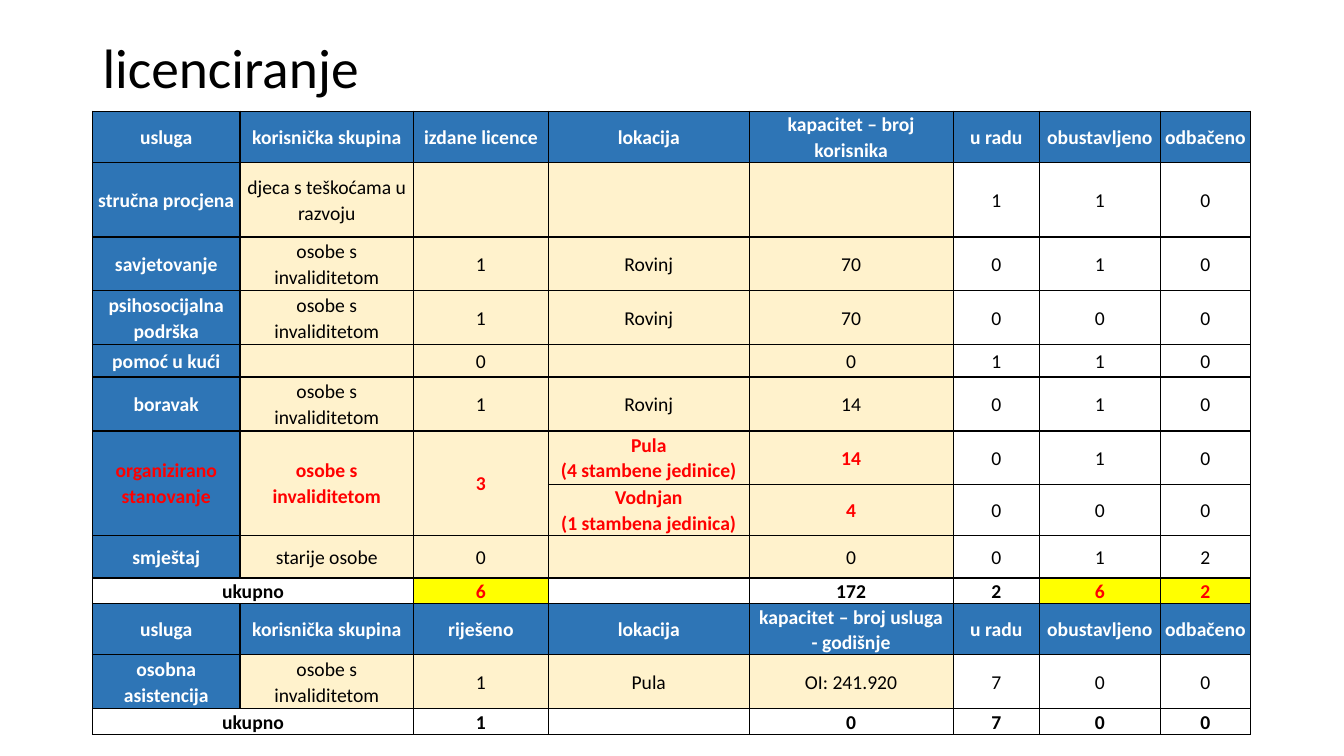
from lxml import etree
from pptx import Presentation
from pptx import util as u
from pptx.dml.color import RGBColor
from pptx.enum import text
from pptx.oxml import ns

FONT = "Calibri"
HUES = {"black": "000000", "white": "FFFFFF", "red": "FF0000",
        "blue": "2E75B6", "cream": "FFF2CC", "yellow": "FFFF00"}
WIDTHS = [3.72, 4.37, 3.4, 5.06, 5.14, 2.18, 3.04, 2.28]
HEIGHTS = [1.3, 1.87, 1.36, 1.36, 0.81, 1.36, 1.34, 1.28, 1.08, 0.64, 1.29, 1.36, 0.64]
DISABLED = "osobe s invaliditetom"
ROWS = [
    ["usluga", "korisnička skupina", "izdane licence", "lokacija",
     "kapacitet – broj korisnika", "u radu", "obustavljeno", "odbačeno"],
    ["stručna procjena", "djeca s teškoćama u razvoju", "", "", "", "1", "1", "0"],
    ["savjetovanje", DISABLED, "1", "Rovinj", "70", "0", "1", "0"],
    ["psihosocijalna podrška", DISABLED, "1", "Rovinj", "70", "0", "0", "0"],
    ["pomoć u kući", "", "0", "", "0", "1", "1", "0"],
    ["boravak", DISABLED, "1", "Rovinj", "14", "0", "1", "0"],
    ["organizirano stanovanje", DISABLED, "3", "Pula\n(4 stambene jedinice)",
     "14", "0", "1", "0"],
    ["", "", "", "Vodnjan\n(1 stambena jedinica)", "4", "0", "0", "0"],
    ["smještaj", "starije osobe", "0", "", "0", "0", "1", "2"],
    ["ukupno", "", "6", "", "172", "2", "6", "2"],
    ["usluga", "korisnička skupina", "riješeno", "lokacija",
     "kapacitet – broj usluga\n- godišnje", "u radu", "obustavljeno", "odbačeno"],
    ["osobna asistencija", DISABLED, "1", "Pula", "OI: 241.920", "7", "0", "0"],
    ["ukupno", "", "1", "", "0", "7", "0", "0"],
]
HEADS, TOTALS, HOUSING = (0, 10), (9, 12), (6, 7)
MARKED = [(9, 2), (9, 6), (9, 7)]
MERGES = [((6, col), (7, col)) for col in range(3)] + [((row, 0), (row, 1)) for row in TOTALS]


def hue(name):
    return RGBColor.from_string(HUES[name])


def look(row, col):
    """Return fill, font colour and boldness of a cell."""
    if (row, col) in MARKED:
        return "yellow", "red", True
    if row in TOTALS:
        return None, "black", True
    if row in HEADS:
        return "blue", "white", True
    if col > 4:
        return None, "black", False
    fill = "blue" if col == 0 else "cream"
    if row in HOUSING:
        return fill, "red", True
    return fill, "white" if col == 0 else "black", col == 0


def border(cell):
    props = cell._tc.get_or_add_tcPr()
    for spot, side in enumerate(("lnL", "lnR", "lnT", "lnB")):
        line = etree.Element(ns.qn(f"a:{side}"), w=str(u.Pt(1)))
        solid = etree.SubElement(line, ns.qn("a:solidFill"))
        etree.SubElement(solid, ns.qn("a:srgbClr"), val=HUES["black"])
        props.insert(spot, line)


def style(cell, fill, color, bold):
    cell.margin_left = cell.margin_right = u.Cm(0.1)
    cell.margin_top = cell.margin_bottom = 0
    cell.vertical_anchor = text.MSO_ANCHOR.MIDDLE
    if fill:
        cell.fill.solid()
        cell.fill.fore_color.rgb = hue(fill)
    else:
        cell.fill.background()
    border(cell)
    for para in cell.text_frame.paragraphs:
        para.alignment = text.PP_ALIGN.CENTER
        para.line_spacing = 1.07
        for run in para.runs:
            run.font.name, run.font.size, run.font.bold = FONT, u.Pt(14), bold
            run.font.color.rgb = hue(color)
        if not para.runs:
            # Empty cells need a small size too, or they stretch their row
            etree.SubElement(para._p, ns.qn("a:endParaRPr"), sz="1400")


def add_title(slide, left, top, width, height):
    title = slide.shapes.title
    title.left, title.top, title.width, title.height = map(u.Cm, (left, top, width, height))
    frame = title.text_frame
    frame.text = "licenciranje"
    frame.auto_size = text.MSO_AUTO_SIZE.NONE
    frame.vertical_anchor = text.MSO_ANCHOR.MIDDLE
    para = frame.paragraphs[0]
    para.alignment = text.PP_ALIGN.LEFT
    para.line_spacing = 0.9
    font = para.runs[0].font
    font.name, font.size = FONT, u.Pt(39.6)
    font.color.rgb = hue("black")


def add_grid(slide, left, top):
    box = map(u.Cm, (left, top, sum(WIDTHS), sum(HEIGHTS)))
    table = slide.shapes.add_table(len(ROWS), len(WIDTHS), *box).table
    table.first_row = table.horz_banding = False
    for col, width in zip(table.columns, WIDTHS):
        col.width = u.Cm(width)
    for row, height in zip(table.rows, HEIGHTS):
        row.height = u.Cm(height)
    for row, words in enumerate(ROWS):
        for col, word in enumerate(words):
            cell = table.cell(row, col)
            cell.text_frame.text = word
            style(cell, *look(row, col))
    for start, end in MERGES:
        table.cell(*start).merge(table.cell(*end))


def main():
    deck = Presentation()
    deck.slide_width, deck.slide_height = u.Cm(33.87), u.Cm(19.05)
    slide = deck.slides.add_slide(deck.slide_layouts[5])
    add_title(slide, 2.33, 1.02, 29.21, 1.52)
    add_grid(slide, 2.33, 2.8)
    deck.save("out.pptx")


if __name__ == "__main__":
    main()
